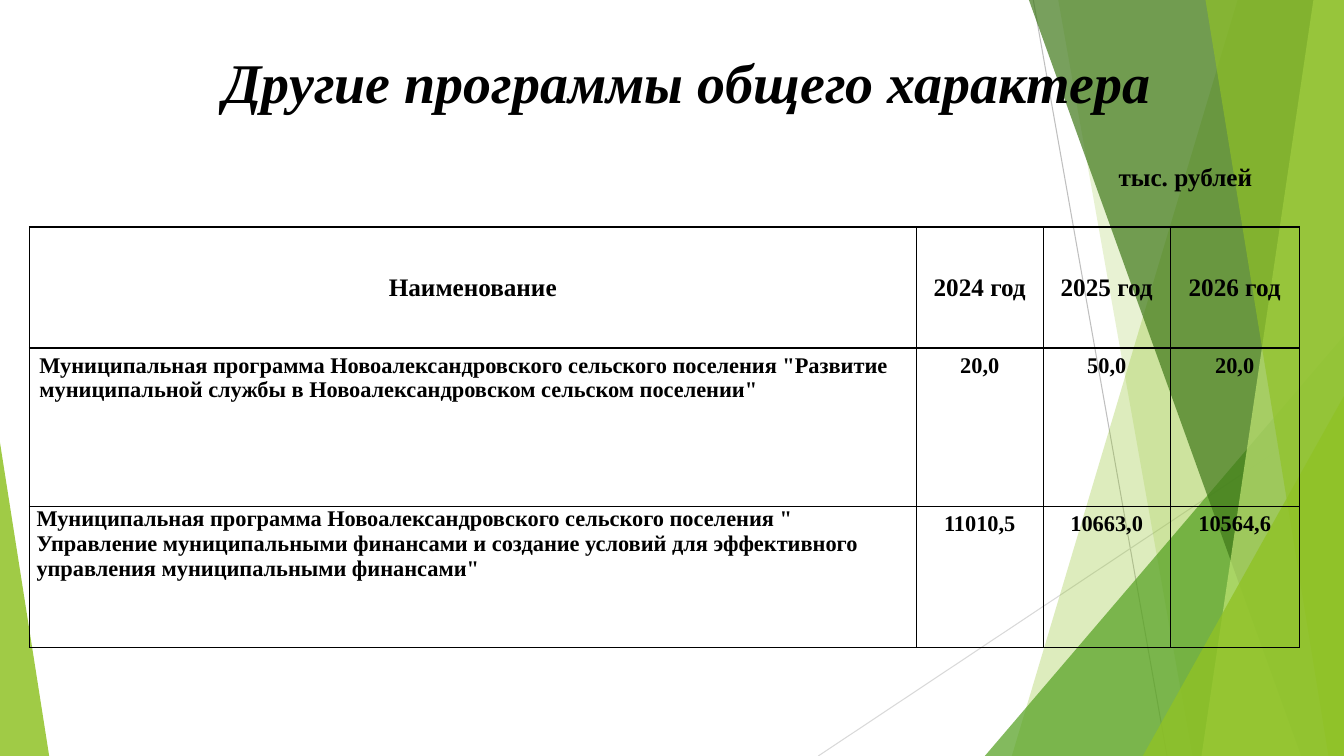
from lxml import etree
from pptx import Presentation
from pptx.dml.color import RGBColor
from pptx.enum import shapes, text
from pptx.oxml import parse_xml
from pptx.oxml.ns import nsdecls, qn
from pptx.util import Cm, Pt

BLACK = RGBColor(0, 0, 0)
SILVER = RGBColor(0xBF, 0xBF, 0xBF)
PALE = RGBColor(0xD9, 0xD9, 0xD9)
LIME = RGBColor(0x90, 0xC2, 0x26)
GREEN = RGBColor(0x54, 0xA0, 0x21)
DARK = RGBColor(0x3F, 0x78, 0x19)
LIGHT = RGBColor(0xC0, 0xE4, 0x74)
WIDE, HIGH = 33.87, 19.05
CENTER = text.PP_ALIGN.CENTER


def paint(shape, color, alpha):
    shape.shadow.inherit = False
    shape.fill.solid()
    shape.fill.fore_color.rgb = color
    tint = shape.fill._xPr.find(qn("a:solidFill"))[0]
    etree.SubElement(tint, qn("a:alpha"), val=str(alpha * 1000))
    shape.line.fill.background()


def style(para, size, align):
    para.alignment = align
    para.font.name = "Times New Roman"
    para.font.size = Pt(size)
    para.font.bold = True
    para.font.color.rgb = BLACK


deck = Presentation()
deck.slide_width, deck.slide_height = Cm(WIDE), Cm(HIGH)
slide = deck.slides.add_slide(deck.slide_layouts[5])
items = slide.shapes

for x1, y1, x2, y2, color in [
    (26.04, 0, 29.41, HIGH, SILVER),
    (WIDE, 10.24, 20.62, HIGH, PALE),
]:
    line = items.add_connector(
        shapes.MSO_CONNECTOR.STRAIGHT, Cm(x1), Cm(y1), Cm(x2), Cm(y2))
    line.line.color.rgb = color
    line.line.width = Pt(0.75)
    etree.SubElement(line._element.spPr, qn("a:effectLst"))

# "band" holds top x and bottom x; "peak" holds left, top, width and apex
for kind, spot, color, alpha in [
    ("band", (31.19, 25.5), LIME, 30),
    ("band", (26.67, 30.05), LIME, 20),
    ("peak", (24.82, 8.46, 9.05, 1), GREEN, 72),
    ("band", (25.93, 32.79), DARK, 70),
    ("band", (33.1, 30.28), LIGHT, 70),
    ("band", (30.38, 33.48), LIME, 65),
    ("peak", (28.8, 9.98, 5.07, 1), LIME, 80),
    ("peak", (0, 11.15, 1.24, 0), LIME, 85),
]:
    if kind == "band":
        top, base = spot
        form = items.build_freeform(Cm(top), 0)
        form.add_line_segments(
            [(Cm(WIDE), 0), (Cm(WIDE), Cm(HIGH)), (Cm(base), Cm(HIGH))])
        shape = form.convert_to_shape()
    else:
        left, top, width, apex = spot
        shape = items.add_shape(
            shapes.MSO_SHAPE.ISOSCELES_TRIANGLE,
            Cm(left), Cm(top), Cm(width), Cm(HIGH - top))
        shape.adjustments[0] = apex
    paint(shape, color, alpha)

title = items.title
items._spTree.append(title._element)
title.left, title.top, title.width, title.height = (
    Cm(2.64), Cm(0.74), Cm(29.69), Cm(2.59))
frame = title.text_frame
frame.text = "Другие программы общего характера "
frame.auto_size = text.MSO_AUTO_SIZE.NONE
frame.vertical_anchor = text.MSO_ANCHOR.MIDDLE
frame.margin_left = frame.margin_right = 0
frame.margin_top = frame.margin_bottom = 0
para = frame.paragraphs[0]
style(para, 40, CENTER)
para.font.italic = True
glow = parse_xml(
    f'<a:effectLst {nsdecls("a")}><a:outerShdw blurRad="38100" dist="38100" '
    'dir="2700000"><a:srgbClr val="000000"><a:alpha val="43000"/>'
    '</a:srgbClr></a:outerShdw></a:effectLst>')
props = para.runs[0]._r.get_or_add_rPr()
props.append(glow)

rows = [
    ("Наименование", "2024 год", "2025 год", "2026 год"),
    ('Муниципальная программа Новоалександровского сельского поселения '
     '"Развитие муниципальной службы в Новоалександровском сельском '
     'поселении"', "20,0", "50,0", "20,0"),
    ('Муниципальная программа Новоалександровского сельского поселения " '
     'Управление муниципальными финансами и создание условий для '
     'эффективного управления муниципальными финансами"',
     "11010,5", "10663,0", "10564,6"),
]
widths = [22.35, 3.2, 3.2, 3.25]
heights = [3.05, 3.99, 3.56]
grid = items.add_table(
    3, 4, Cm(0.74), Cm(5.72), Cm(sum(widths)), Cm(sum(heights))).table
grid.first_row = grid.horz_banding = False
for col, width in zip(grid.columns, widths):
    col.width = Cm(width)
for r, row in enumerate(rows):
    grid.rows[r].height = Cm(heights[r])
    for c, words in enumerate(row):
        cell = grid.cell(r, c)
        cell.text = words
        head = r == 0
        style(cell.text_frame.paragraphs[0], 18 if head else 16,
              CENTER if head or c else text.PP_ALIGN.LEFT)
        if head:
            cell.vertical_anchor = text.MSO_ANCHOR.MIDDLE
        for side in ("L", "R", "T", "B"):
            cell._tc.get_or_add_tcPr().append(parse_xml(
                f'<a:ln{side} {nsdecls("a")} w="12700"><a:solidFill>'
                f'<a:srgbClr val="{BLACK}"/></a:solidFill></a:ln{side}>'))
        cell.fill.background()
last = grid.cell(2, 0)
last.margin_left = last.margin_right = Cm(0.18)
last.margin_top = last.margin_bottom = 0

unit = items.add_textbox(Cm(27.94), Cm(3.94), Cm(5.05), Cm(1.02)).text_frame
unit.word_wrap = True
unit.auto_size = text.MSO_AUTO_SIZE.SHAPE_TO_FIT_TEXT
unit.text = "тыс. рублей"
style(unit.paragraphs[0], 18, text.PP_ALIGN.LEFT)

deck.save("out.pptx")
